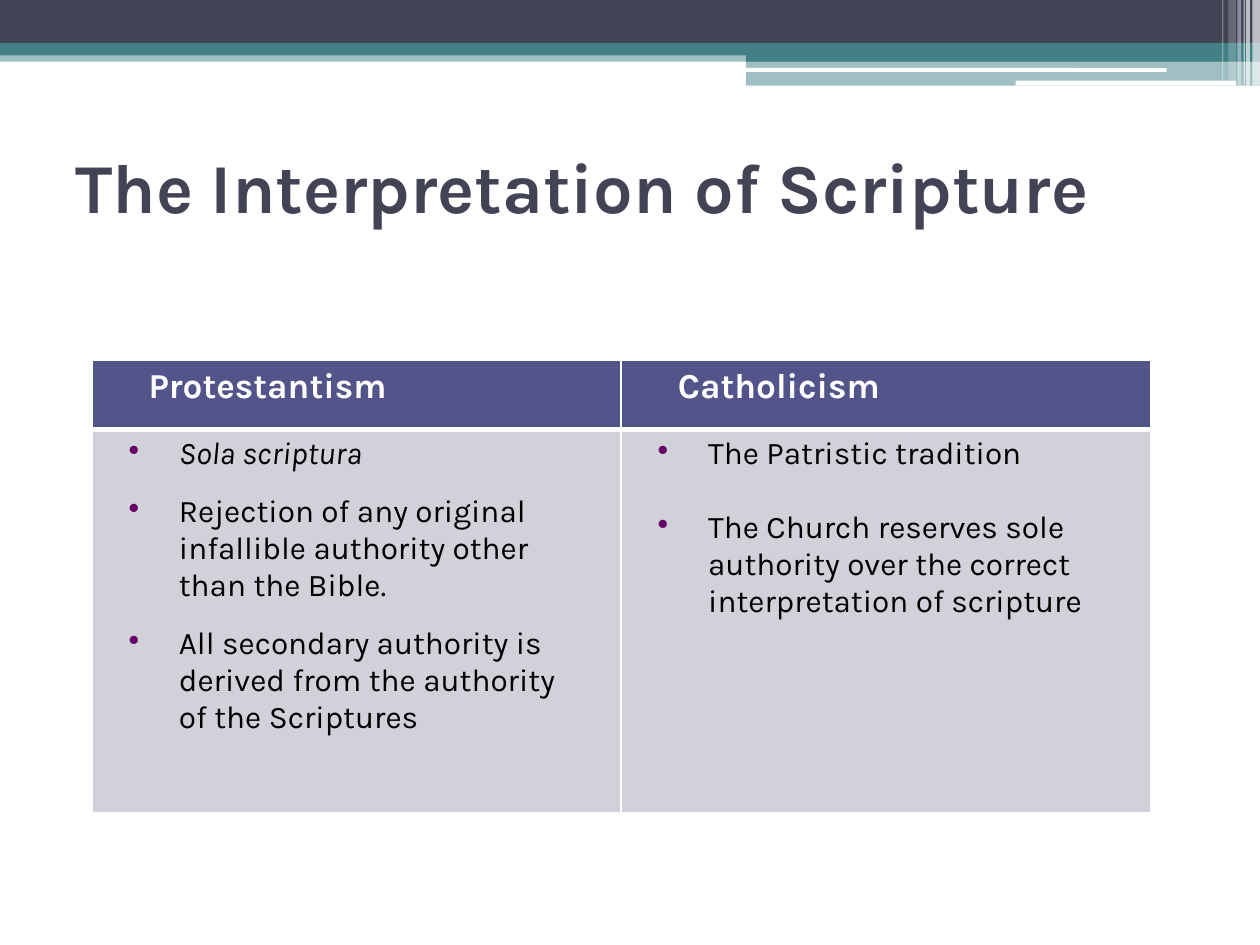
from lxml.etree import SubElement
from pptx import Presentation
from pptx.dml.color import RGBColor
from pptx.enum.shapes import MSO_SHAPE
from pptx.enum.text import MSO_ANCHOR
from pptx.oxml.ns import qn
from pptx.util import Inches, Pt

FONT = "Karla"
COLORS = {
    "navy": "424456",
    "teal": "438086",
    "white": "FFFFFF",
    "header": "53548A",
    "body": "D1D1DA",
    "bullet": "660066",
    "text": "000000",
}
BANDS = [
    (0, 0.4, 10, 0.09, "teal", 50),
    (0, 0, 10, 0.34, "navy", 100),
    (0, 0.34, 10, 0.1, "teal", 100),
    (5.92, 0.39, 4.08, 0.1, "teal", 100),
    (5.92, 0.48, 4.08, 0.2, "teal", 50),
]
HIGHLIGHTS = [(5.91, 0.54, 3.35, 0.03), (8.06, 0.64, 1.75, 0.04)]
STRIPES = [
    (9.94, 0.06, 0.68, 65),
    (9.89, 0.03, 0.68, 65),
    (9.87, 0.01, 0.68, 60),
    (9.82, 0.03, 0.68, 40),
    (9.75, 0.06, 0.64, 20),
    (9.7, 0.01, 0.64, 30),
]
COLUMNS = [
    ("Protestantism", 12, [
        ("Sola scriptura", True),
        ("Rejection of any original infallible authority other \nthan the Bible.", False),
        ("All secondary authority is derived from the authority \nof the Scriptures", False),
    ]),
    ("Catholicism", 21, [
        ("The Patristic tradition", False),
        ("The Church reserves sole authority over the correct interpretation of scripture", False),
    ]),
]


def rgb(name):
    return RGBColor.from_string(COLORS[name])


def add_block(page, left, top, width, height, color, opacity=100, preset=MSO_SHAPE.RECTANGLE):
    block = page.shapes.add_shape(preset, Inches(left), Inches(top), Inches(width), Inches(height))
    block.shadow.inherit = False
    block.line.fill.background()
    block.fill.solid()
    block.fill.fore_color.rgb = rgb(color)
    if opacity < 100:
        tint = block.fill._xPr.find(qn("a:solidFill"))[0]
        SubElement(tint, qn("a:alpha"), val=str(opacity * 1000))


def add_span(para, text, size, color, bold=False, italic=False):
    for index, line in enumerate(text.split("\n")):
        if index:
            para.add_line_break()
        span = para.add_run()
        span.text = line
        span.font.name = FONT
        span.font.size = Pt(size)
        span.font.bold = bold
        span.font.italic = italic
        span.font.color.rgb = rgb(color)


def set_indent(para, margin, first=0):
    properties = para._p.get_or_add_pPr()
    properties.set("marL", str(Inches(margin)))
    properties.set("indent", str(Inches(first)))
    return properties


def add_bullet(para):
    properties = set_indent(para, 0.59, -0.4)
    color = SubElement(properties, qn("a:buClr"))
    SubElement(color, qn("a:srgbClr"), val=COLORS["bullet"])
    SubElement(properties, qn("a:buChar"), char="•")


def style_cell(cell, color, top, bottom):
    properties = cell._tc.get_or_add_tcPr()
    for side, width in (("L", 1), ("R", 1), ("T", top), ("B", bottom)):
        border = SubElement(properties, qn(f"a:ln{side}"), w=str(Pt(width)))
        fill = SubElement(border, qn("a:solidFill"))
        SubElement(fill, qn("a:srgbClr"), val=COLORS["white"])
    cell.fill.solid()
    cell.fill.fore_color.rgb = rgb(color)


def add_title(page, text):
    box = page.shapes.add_textbox(Inches(0.5), Inches(0.89), Inches(9), Inches(1.17))
    box.text_frame.word_wrap = True
    box.text_frame.vertical_anchor = MSO_ANCHOR.MIDDLE
    add_span(box.text_frame.paragraphs[0], text, 40, "navy", bold=True)


def add_comparison(page):
    frame = page.shapes.add_table(2, len(COLUMNS), Inches(0.73), Inches(2.86), Inches(8.4), Inches(3.59))
    table = frame.table
    table.rows[0].height = Inches(0.55)
    table.rows[1].height = Inches(3.04)
    for index, (heading, gap, points) in enumerate(COLUMNS):
        header, body = table.cell(0, index), table.cell(1, index)
        style_cell(header, "header", 1, 3)
        style_cell(body, "body", 3, 1)
        para = header.text_frame.paragraphs[0]
        set_indent(para, 0.35)
        add_span(para, heading, 20, "white", bold=True)
        for number, (text, italic) in enumerate(points):
            para = body.text_frame.add_paragraph() if number else body.text_frame.paragraphs[0]
            add_bullet(para)
            para.space_after = Pt(gap)
            add_span(para, text, 18, "text", italic=italic)


def main():
    deck = Presentation()
    deck.slide_width, deck.slide_height = Inches(10), Inches(7.5)
    page = deck.slides.add_slide(deck.slide_layouts[6])
    for band in BANDS:
        add_block(page, *band)
    for highlight in HIGHLIGHTS:
        add_block(page, *highlight, "white", preset=MSO_SHAPE.ROUNDED_RECTANGLE)
    for left, width, height, opacity in STRIPES:
        add_block(page, left, 0, width, height, "white", opacity)
    add_title(page, "The Interpretation of Scripture")
    add_comparison(page)
    deck.save("out.pptx")


if __name__ == "__main__":
    main()
